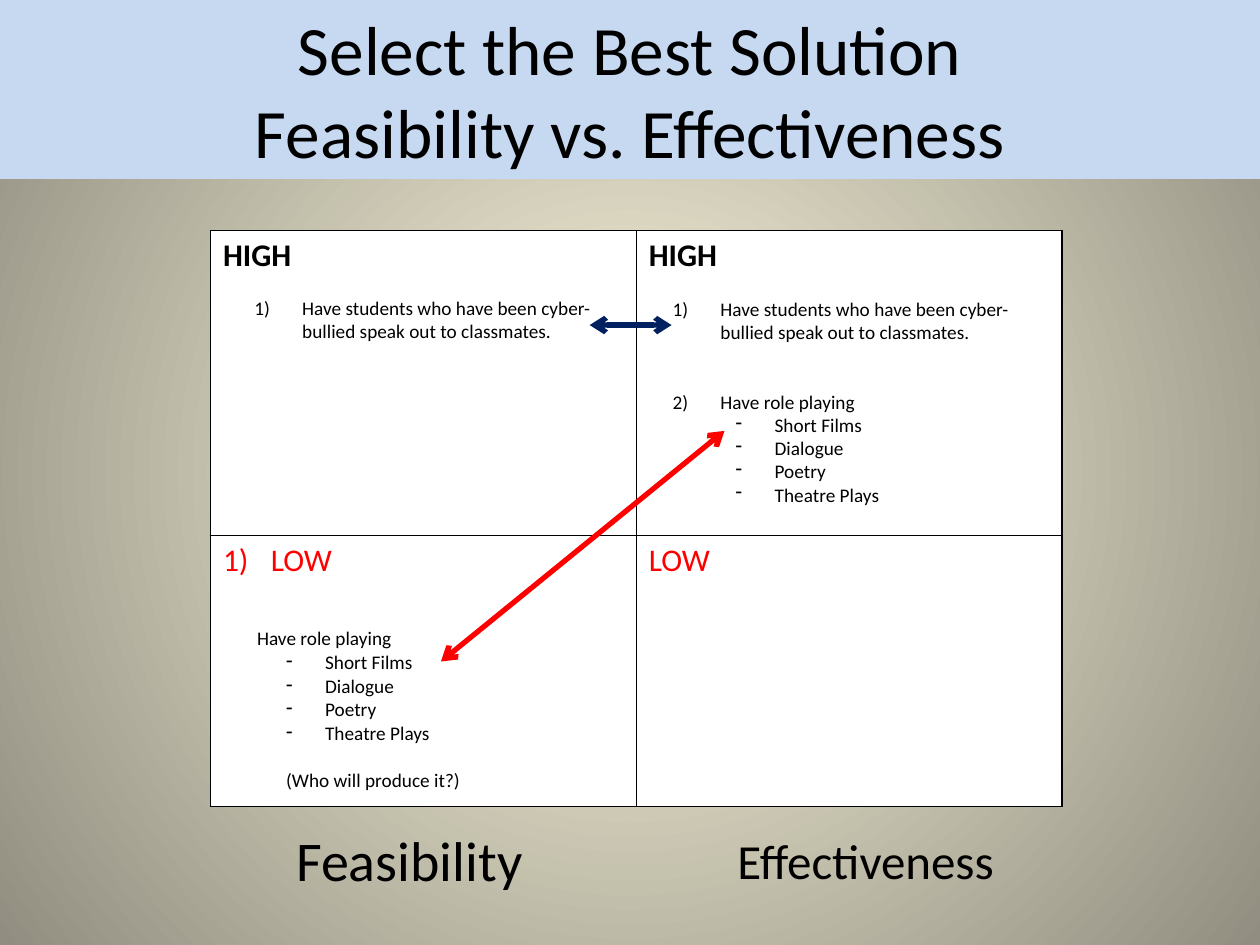
from lxml import etree
from pptx import Presentation
from pptx import util as u
from pptx.dml.color import RGBColor
from pptx.enum import shapes, text
from pptx.oxml import ns

BLACK = RGBColor(0x00, 0x00, 0x00)
WHITE = RGBColor(0xFF, 0xFF, 0xFF)
RED = RGBColor(0xFF, 0x00, 0x00)
NAVY = RGBColor(0x00, 0x20, 0x60)
BANNER = RGBColor(0xC6, 0xD9, 0xF1)
GLOW = RGBColor(0xFC, 0xF7, 0xDD)
EDGE = RGBColor(0x91, 0x8E, 0x81)
FONT = "Calibri"
LINE = 13.4

STYLES = {
    "plain": dict(),
    "number": dict(margin=0.38, indent=-0.38, number=1),
    "second": dict(margin=0.38, indent=-0.38, number=2, before=2 * LINE),
    "dash": dict(margin=0.81, indent=-0.31, dash=True, level=1),
    "lead": dict(margin=0.27, before=2 * LINE),
    "remark": dict(margin=0.5, before=LINE, level=1),
    "center": dict(align=text.PP_ALIGN.CENTER),
}

TITLE = "Select the Best Solution\vFeasibility vs. Effectiveness"
SPEAKERS = ("Have students who have been cyber-bullied speak out to classmates.", "number", 11, BLACK, False)
PLAYS = [(name, "dash", 11, BLACK, False)
         for name in ("Short Films", "Dialogue", "Poetry", "Theatre Plays")]
HIGH = [("HIGH", "plain", 18, BLACK, True)]
CELLS = [
    [HIGH, HIGH],
    [[("LOW", "number", 18, RED, False),
      ("Have role playing", "lead", 11, BLACK, False),
      *PLAYS,
      ("(Who will produce it?)", "remark", 11, BLACK, False)],
     [("LOW", "plain", 18, RED, False)]],
]
GRID_LEFT, GRID_TOP, COLUMN = 1.67, 1.83, 3.38
ROWS = [2.42, 2.15]
BOXES = [
    ((1.92, 6.5, 2.66, 0.64), [("Feasibility", "center", 32, BLACK, False)]),
    ((5.33, 6.54, 3.08, 0.57), [("Effectiveness", "center", 28, BLACK, False)]),
    ((1.92, 2.3, 2.94, 0.84), [SPEAKERS]),
    ((5.24, 2.31, 2.94, 1.77),
     [SPEAKERS, ("Have role playing", "second", 11, BLACK, False), *PLAYS]),
]
ARROWS = [((3.5, 5.25), (5.75, 3.42), RED), ((4.68, 2.58), (5.33, 2.58), NAVY)]


def add(parent, tag, **attributes):
    return etree.SubElement(parent, ns.qn(tag), attributes)


def style(para, margin=0, indent=0, number=None, dash=False, before=0, level=0,
          align=text.PP_ALIGN.LEFT):
    para.level = level
    para.alignment = align
    para.space_before = u.Pt(before)
    properties = para._p.get_or_add_pPr()
    properties.set("marL", str(u.Inches(margin)))
    properties.set("indent", str(u.Inches(indent)))
    if number:
        add(properties, "a:buFont", typeface="+mj-lt")
        add(properties, "a:buAutoNum", type="arabicParenR", startAt=str(number))
    elif dash:
        add(properties, "a:buFontTx")
        add(properties, "a:buChar", char="-")
    else:
        add(properties, "a:buNone")


def write(frame, lines):
    frame.word_wrap = True
    for index, (words, kind, size, color, bold) in enumerate(lines):
        para = frame.add_paragraph() if index else frame.paragraphs[0]
        para.text = words
        style(para, **STYLES[kind])
        for span in para.runs:
            span.font.name = FONT
            span.font.size = u.Pt(size)
            span.font.bold = bold
            span.font.color.rgb = color


def outline(cell):
    properties = cell._tc.get_or_add_tcPr()
    for side in ("a:lnL", "a:lnR", "a:lnT", "a:lnB"):
        edge = add(properties, side, w=str(u.Pt(1)))
        add(add(edge, "a:solidFill"), "a:srgbClr", val=str(BLACK))


def paint_background(page):
    fill = page.background.fill
    fill.gradient()
    for stop, color, position in zip(fill.gradient_stops, (GLOW, EDGE), (0, 1)):
        stop.color.rgb = color
        stop.position = position
    linear = page.background._cSld.find(".//" + ns.qn("a:lin"))
    gradient = linear.getparent()
    gradient.remove(linear)
    circle = add(gradient, "a:path", path="circle")
    add(circle, "a:fillToRect", l="50000", t="50000", r="50000", b="50000")


def add_title(page, width):
    title = page.shapes.title
    title.left, title.top, title.width, title.height = 0, 0, width, u.Inches(1.42)
    title.fill.solid()
    title.fill.fore_color.rgb = BANNER
    write(title.text_frame, [(TITLE, "center", 39.6, BLACK, False)])
    title.text_frame.auto_size = text.MSO_AUTO_SIZE.NONE
    title.text_frame.vertical_anchor = text.MSO_ANCHOR.MIDDLE


def add_matrix(page):
    place = [u.Inches(n) for n in (GRID_LEFT, GRID_TOP, 2 * COLUMN, sum(ROWS))]
    table = page.shapes.add_table(2, 2, *place).table
    table.first_row = table.horz_banding = False
    for column in table.columns:
        column.width = u.Inches(COLUMN)
    for row, height, contents in zip(table.rows, ROWS, CELLS):
        row.height = u.Inches(height)
        for cell, lines in zip(row.cells, contents):
            write(cell.text_frame, lines)
            outline(cell)
            cell.fill.solid()
            cell.fill.fore_color.rgb = WHITE


def add_arrow(page, start, end, color):
    points = [u.Inches(n) for n in start + end]
    arrow = page.shapes.add_connector(shapes.MSO_CONNECTOR.STRAIGHT, *points)
    arrow.line.color.rgb = color
    arrow.line.width = u.Pt(3)
    for tip in ("a:headEnd", "a:tailEnd"):
        add(arrow.line._get_or_add_ln(), tip, type="arrow")
    add(arrow._element.spPr, "a:effectLst")


def main():
    deck = Presentation()
    deck.slide_width, deck.slide_height = u.Inches(10), u.Inches(7.5)
    page = deck.slides.add_slide(deck.slide_layouts[5])
    paint_background(page)
    add_title(page, deck.slide_width)
    add_matrix(page)
    for place, lines in BOXES:
        box = page.shapes.add_textbox(*[u.Inches(n) for n in place])
        write(box.text_frame, lines)
    for start, end, color in ARROWS:
        add_arrow(page, start, end, color)
    deck.save("out.pptx")


if __name__ == "__main__":
    main()
